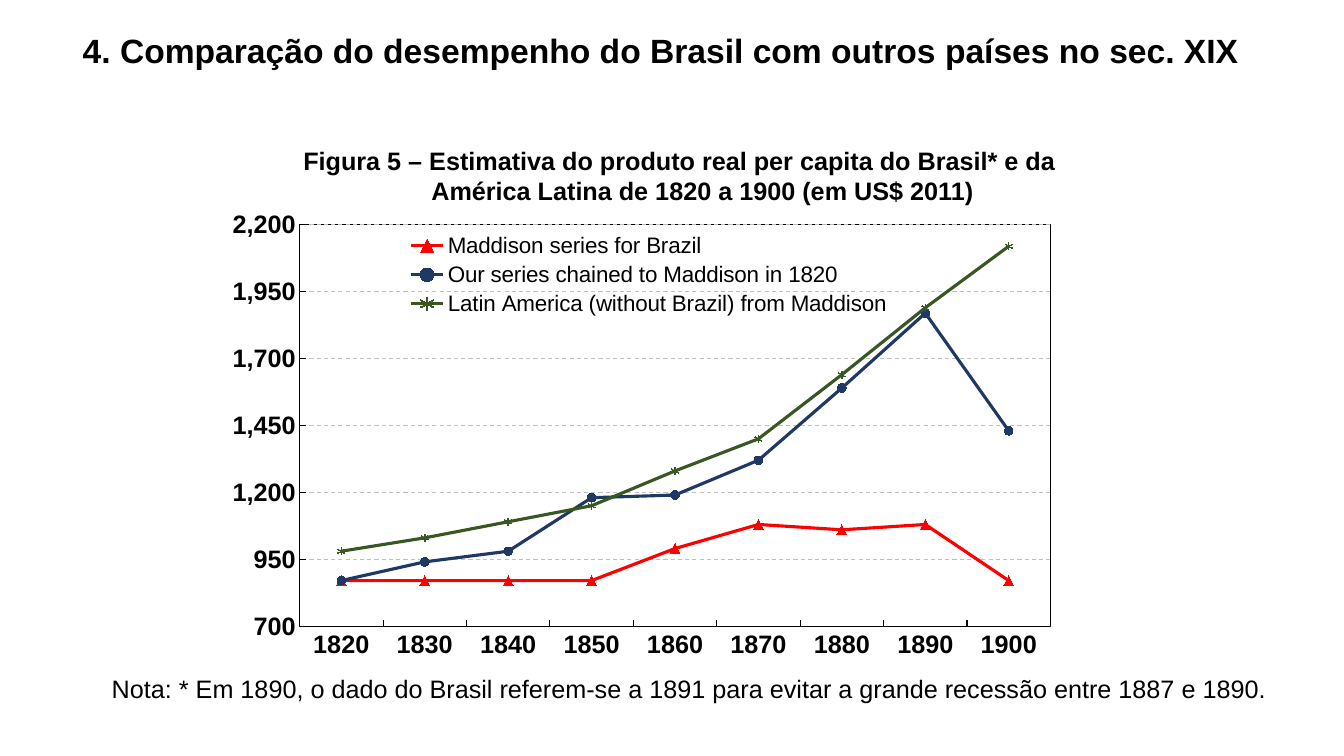
from lxml import etree
from pptx import Presentation
from pptx.chart.data import CategoryChartData
from pptx.dml.color import RGBColor
from pptx.enum import chart as ch, dml, text
from pptx.oxml import parse_xml
from pptx.oxml.ns import nsdecls, qn
from pptx.util import Inches, Pt

FONT = "Arial"
COLORS = {"black": "000000", "grid": "BFBFBF", "red": "FF0000",
          "blue": "203864", "navy": "002060", "green": "385723"}
MARKER = ch.XL_MARKER_STYLE
YEARS = [str(year) for year in range(1820, 1901, 10)]
# name, values, line colour, marker style, marker size, marker colour
SERIES = [
    ("Maddison series for Brazil",
     (870, 870, 870, 870, 990, 1080, 1060, 1080, 870),
     "red", MARKER.TRIANGLE, 7, "red"),
    ("Our series chained to Maddison in 1820",
     (870, 940, 980, 1180, 1190, 1320, 1590, 1870, 1430),
     "blue", MARKER.CIRCLE, 6, "navy"),
    ("Latin America (without Brazil) from Maddison",
     (980, 1030, 1090, 1150, 1280, 1400, 1640, 1890, 2120),
     "green", MARKER.STAR, 5, "green"),
]


def rgb(name):
    return RGBColor.from_string(COLORS[name])


def set_font(font, size, bold=False):
    font.name, font.size, font.bold = FONT, Pt(size), bold
    font.color.rgb = rgb("black")


def set_line(line, color, width):
    line.color.rgb = rgb(color)
    line.width = Pt(width)


def set_title(s, box, words):
    title = s.shapes.title
    title.left, title.top, title.width, title.height = map(Inches, box)
    tf = title.text_frame
    tf.text = words
    tf.word_wrap = True
    tf.auto_size = text.MSO_AUTO_SIZE.NONE
    tf.vertical_anchor = text.MSO_ANCHOR.MIDDLE
    p = tf.paragraphs[0]
    p.alignment = text.PP_ALIGN.LEFT
    p.line_spacing = 0.9
    set_font(p.font, 24, True)


def add_text(s, box, words, bold=False, hanging=0):
    tf = s.shapes.add_textbox(*map(Inches, box)).text_frame
    tf.word_wrap = True
    tf.text = words
    p = tf.paragraphs[0]
    set_font(p.font, 18, bold)
    if hanging:
        pPr = p._p.get_or_add_pPr()
        pPr.set("marL", str(Inches(hanging)))
        pPr.set("indent", str(-Inches(hanging)))


def set_layout(parent, index, box, inner=False):
    """Place a chart part by fractions of the chart's width and height."""
    for old in parent.findall(qn("c:layout")):
        parent.remove(old)
    layout = parse_xml(f"<c:layout {nsdecls('c')}><c:manualLayout/></c:layout>")
    settings = [("layoutTarget", "inner")] if inner else []
    settings += [("xMode", "edge"), ("yMode", "edge"), *zip("xywh", box)]
    for tag, value in settings:
        etree.SubElement(layout[0], qn(f"c:{tag}")).set("val", str(value))
    parent.insert(index, layout)


def frame_plot(plot_area):
    plot_area.append(parse_xml(
        f'<c:spPr {nsdecls("c", "a")}><a:noFill/><a:ln w="{Pt(0.75)}"><a:solidFill>'
        f'<a:srgbClr val="{COLORS["black"]}"/></a:solidFill></a:ln></c:spPr>'))


def format_axes(chart):
    for axis in (chart.category_axis, chart.value_axis):
        set_font(axis.tick_labels.font, 18, True)
        set_line(axis.format.line, "black", 0.75)
        axis.major_tick_mark = ch.XL_TICK_MARK.INSIDE
        axis.minor_tick_mark = ch.XL_TICK_MARK.NONE
    axis = chart.value_axis
    axis.minimum_scale, axis.maximum_scale, axis.major_unit = 700, 2200, 250
    axis.tick_labels.number_format = "#,##0"
    axis.tick_labels.number_format_is_linked = False
    grid = axis.major_gridlines.format.line
    set_line(grid, "grid", 0.75)
    grid.dash_style = dml.MSO_LINE.DASH


def format_series(series, color, style, size, marker_color):
    series.smooth = False
    set_line(series.format.line, color, 2.25)
    marker = series.marker
    marker.style, marker.size = style, size
    marker.format.fill.solid()
    marker.format.fill.fore_color.rgb = rgb(marker_color)
    set_line(marker.format.line, marker_color, 0.75)


def add_line_chart(s, box):
    data = CategoryChartData(number_format="#,##0")
    data.categories = YEARS
    for name, values, *_ in SERIES:
        data.add_series(name, values)
    chart = s.shapes.add_chart(ch.XL_CHART_TYPE.LINE_MARKERS,
                               *map(Inches, box), data).chart
    set_font(chart.font, 10)
    chart.has_title = False
    chart.plots[0].vary_by_categories = False
    for series, (_, _, *look) in zip(chart.plots[0].series, SERIES):
        format_series(series, *look)
    format_axes(chart)
    chart.has_legend = True
    legend = chart.legend
    legend.position = ch.XL_LEGEND_POSITION.BOTTOM
    legend.include_in_layout = False
    set_font(legend.font, 16)
    set_layout(legend._element, 1, (0.21, 0.04, 0.57, 0.2))
    plot_area = chart._chartSpace.chart.plotArea
    set_layout(plot_area, 0, (0.093, 0.031, 0.864, 0.877), inner=True)
    frame_plot(plot_area)


def main():
    prs = Presentation()
    prs.slide_width, prs.slide_height = Inches(13.33), Inches(7.5)
    s = prs.slides.add_slide(prs.slide_layouts.get_by_name("Title Only"))
    set_title(s, (0.72, 0.17, 11.9, 0.7),
              "4. Comparação do desempenho do Brasil com outros países no sec. XIX")
    add_text(s, (2.91, 1.39, 7.87, 0.71),
             "Figura 5 – Estimativa do produto real per capita do Brasil* e da "
             "América Latina de 1820 a 1900 (em US$ 2011)", bold=True, hanging=1.27)
    add_text(s, (1.01, 6.63, 11.67, 0.4),
             "Nota: * Em 1890, o dado do Brasil referem-se a 1891 para evitar a "
             "grande recessão entre 1887 e 1890.")
    add_line_chart(s, (2.17, 2.09, 8.62, 4.54))
    prs.save("out.pptx")


if __name__ == "__main__":
    main()
